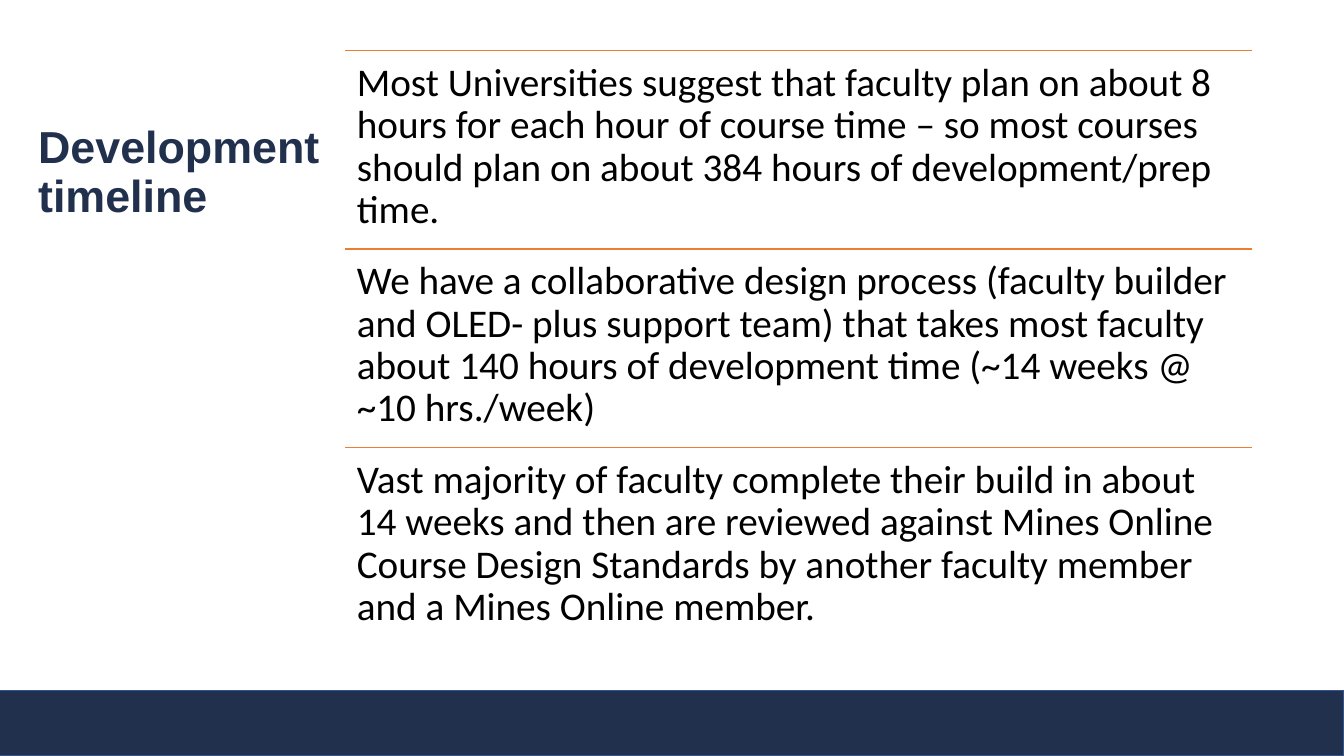
from lxml.etree import SubElement
from pptx import Presentation
from pptx.dml.color import RGBColor
from pptx.enum.shapes import MSO_CONNECTOR, MSO_SHAPE
from pptx.enum.text import MSO_ANCHOR
from pptx.oxml.ns import qn
from pptx.util import Inches, Pt

COLORS = {
    "navy": "21314D",
    "edge": "325491",
    "orange": "ED7D31",
    "black": "000000",
}


def color(name):
    return RGBColor.from_string(COLORS[name])


def add_text(page, place, text, tone, font_format, frame_format):
    box = page.shapes.add_textbox(*[Inches(length) for length in place])
    frame = box.text_frame
    frame.word_wrap = True
    for key, value in frame_format.items():
        setattr(frame, key, value)
    para = frame.paragraphs[0]
    para.line_spacing = 0.9
    span = para.add_run()
    span.text = text
    for key, value in font_format.items():
        setattr(span.font, key, value)
    span.font.color.rgb = color(tone)


deck = Presentation()
deck.slide_width, deck.slide_height = Inches(13.33), Inches(7.5)
page = deck.slides.add_slide(deck.slide_layouts[6])

footer = page.shapes.add_shape(
    MSO_SHAPE.RECTANGLE, Inches(-0.01), Inches(6.85), Inches(13.34), Inches(0.65)
)
footer.shadow.inherit = False
footer.fill.solid()
footer.fill.fore_color.rgb = color("navy")
footer.line.color.rgb = color("edge")
footer.line.width = Pt(1)

add_text(
    page,
    (0.28, 0.5, 4.3, 1.75),
    "Development timeline",
    "navy",
    {"name": "Arial", "size": Pt(32), "bold": True},
    {"vertical_anchor": MSO_ANCHOR.BOTTOM},
)

statements = [
    "Most Universities suggest that faculty plan on about 8 hours for each hour of "
    "course time – so most courses should plan on about 384 hours of "
    "development/prep time.",
    "We have a collaborative design process (faculty builder and OLED- plus support "
    "team) that takes most faculty about 140 hours of development time (~14 weeks @ "
    "~10 hrs./week)",
    "Vast majority of faculty complete their build in about 14 weeks and then are "
    "reviewed against Mines Online Course Design Standards by another faculty member "
    "and a Mines Online member.",
]
left, top, width, row_height = 3.42, 0.5, 9, 1.97
sides = ("left", "top", "right", "bottom")
insets = {f"margin_{side}": Inches(0.12) for side in sides}

for row, statement in enumerate(statements):
    row_top = top + row * row_height
    rule = page.shapes.add_connector(
        MSO_CONNECTOR.STRAIGHT,
        Inches(left), Inches(row_top), Inches(left + width), Inches(row_top),
    )
    rule.line.color.rgb = color("orange")
    rule.line.width = Pt(1)
    SubElement(rule.element.spPr, qn("a:effectLst"))
    add_text(
        page,
        (left, row_top, width, row_height),
        statement,
        "black",
        {"name": "Calibri", "size": Pt(28), "bold": False},
        insets,
    )

deck.save("out.pptx")
